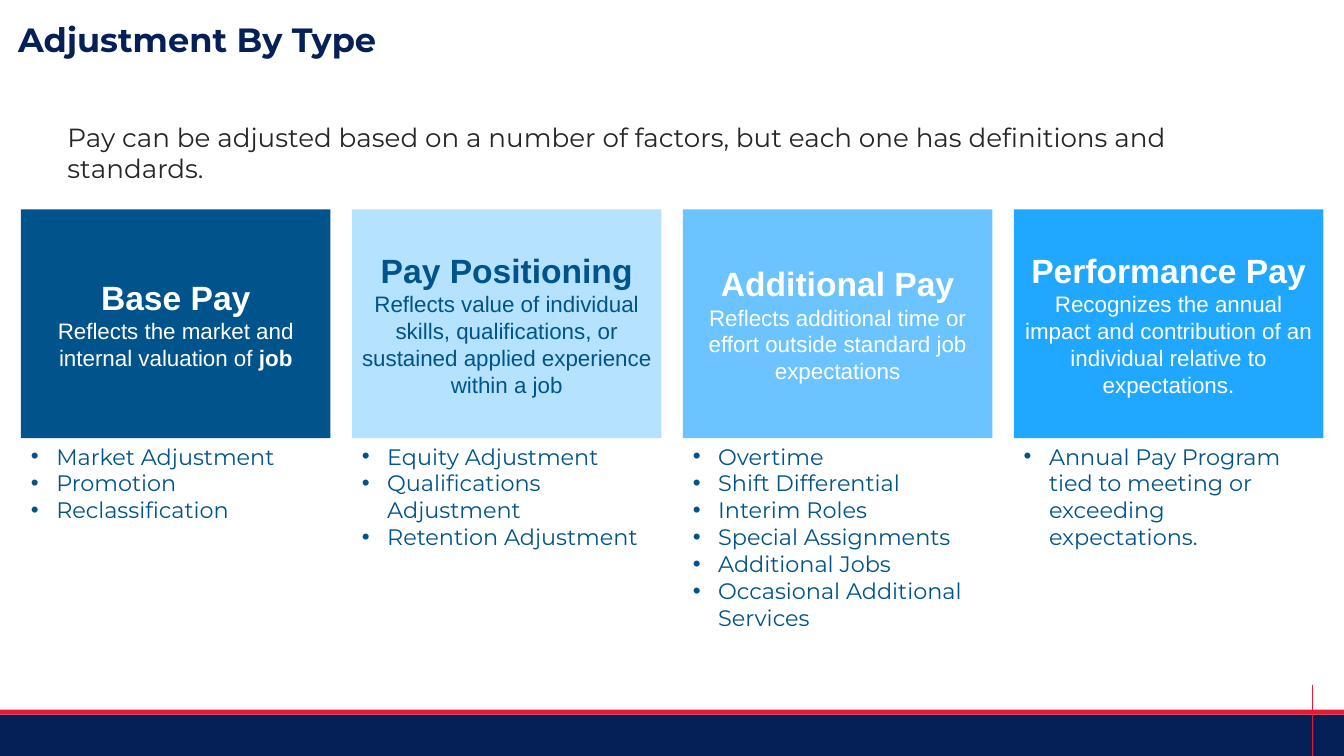
from dataclasses import dataclass

from lxml.etree import SubElement
from pptx import Presentation
from pptx.dml.color import RGBColor
from pptx.enum.shapes import MSO_CONNECTOR, MSO_SHAPE
from pptx.enum.text import MSO_ANCHOR, MSO_AUTO_SIZE, PP_ALIGN
from pptx.oxml.ns import qn
from pptx.util import Cm, Pt


@dataclass(frozen=True)
class Theme:
    navy: str = "052057"
    red: str = "E61937"
    charcoal: str = "242724"
    blue: str = "00548B"
    pale_blue: str = "B5E2FF"
    sky_blue: str = "6BC4FF"
    bright_blue: str = "20A7FF"
    white: str = "FFFFFF"
    text_font: str = "Montserrat"
    card_font: str = "Arial"
    heading_size: float = 24
    intro_size: float = 18.7
    body_size: float = 16


THEME = Theme()
SLIDE_WIDTH, SLIDE_HEIGHT = Cm(33.87), Cm(19.05)
COLUMN_LEFT, COLUMN_PITCH, COLUMN_WIDTH = Cm(0.53), Cm(8.34), Cm(7.8)
CARD_TOP, CARD_HEIGHT = Cm(5.28), Cm(5.76)
LIST_TOP, LIST_LINE, LIST_MARGIN = Cm(11.03), Cm(0.68), Cm(0.25)
BULLET_INDENT = Cm(0.64)

# Heading, description, bold ending, fill, text colour, adjustments, lines they take
PAY_TYPES = [
    ("Base Pay", "Reflects the market and internal valuation of ", "job",
     THEME.blue, THEME.white,
     ["Market Adjustment", "Promotion", "Reclassification"], 3),
    ("Pay Positioning",
     "Reflects value of individual skills, qualifications, or sustained applied "
     "experience within a job", "", THEME.pale_blue, THEME.blue,
     ["Equity Adjustment", "Qualifications Adjustment", "Retention Adjustment"], 4),
    ("Additional Pay",
     "Reflects additional time or effort outside standard job expectations", "",
     THEME.sky_blue, THEME.white,
     ["Overtime", "Shift Differential", "Interim Roles", "Special Assignments",
      "Additional Jobs", "Occasional Additional Services"], 7),
    ("Performance Pay",
     "Recognizes the annual impact and contribution of an individual relative to "
     "expectations.", "", THEME.bright_blue, THEME.white,
     ["Annual Pay Program tied to meeting or exceeding expectations."], 4),
]


def write(paragraph, text, *, size, color, font=THEME.text_font, bold=False,
          align=PP_ALIGN.LEFT):
    """Append one formatted run to a paragraph."""
    paragraph.alignment = align
    run = paragraph.add_run()
    run.text = text
    run.font.name = font
    run.font.size = Pt(size)
    run.font.bold = bold
    run.font.color.rgb = RGBColor.from_string(color)


def add_block(slide, left, top, width, height, fill):
    block = slide.shapes.add_shape(MSO_SHAPE.RECTANGLE, left, top, width, height)
    block.shadow.inherit = False
    block.fill.solid()
    block.fill.fore_color.rgb = RGBColor.from_string(fill)
    block.line.fill.background()
    return block


def add_footer(slide):
    add_block(slide, 0, Cm(18.01), SLIDE_WIDTH, Cm(1.04), THEME.navy)
    marker = slide.shapes.add_connector(
        MSO_CONNECTOR.STRAIGHT, Cm(33.07), Cm(17.25), Cm(33.07), SLIDE_HEIGHT)
    marker.line.color.rgb = RGBColor.from_string(THEME.red)
    marker.line.width = Pt(0.5)
    SubElement(marker._element.spPr, qn("a:effectLst"))
    add_block(slide, 0, Cm(17.88), SLIDE_WIDTH, Cm(0.13), THEME.red)


def set_title(slide, text):
    title = slide.shapes.title
    title.left, title.top, title.width, title.height = Cm(0.2), Cm(0.36), Cm(9.65), Cm(1.27)
    frame = title.text_frame
    frame.word_wrap = False
    frame.auto_size = MSO_AUTO_SIZE.SHAPE_TO_FIT_TEXT
    frame.vertical_anchor = MSO_ANCHOR.TOP
    write(frame.paragraphs[0], text, size=THEME.heading_size, color=THEME.navy, bold=True)


def add_intro(slide, text):
    intro = slide.shapes.add_textbox(Cm(1.7), Cm(3.05), Cm(30.48), Cm(1.63))
    frame = intro.text_frame
    frame.word_wrap = True
    frame.margin_left = frame.margin_top = frame.margin_right = frame.margin_bottom = 0
    frame.paragraphs[0].space_before = Pt(13.3)
    write(frame.paragraphs[0], text, size=THEME.intro_size, color=THEME.charcoal)


def add_card(slide, left, heading, description, ending, fill, color):
    card = add_block(slide, left, CARD_TOP, COLUMN_WIDTH, CARD_HEIGHT, fill)
    frame = card.text_frame
    frame.word_wrap = True
    frame.vertical_anchor = MSO_ANCHOR.MIDDLE
    style = dict(color=color, font=THEME.card_font, align=PP_ALIGN.CENTER)
    write(frame.paragraphs[0], heading, size=THEME.heading_size, bold=True, **style)
    details = frame.add_paragraph()
    write(details, description, size=THEME.body_size, **style)
    if ending:
        write(details, ending, size=THEME.body_size, bold=True, **style)


def add_bullet(paragraph):
    properties = paragraph._p.get_or_add_pPr()
    properties.set("marL", str(BULLET_INDENT))
    properties.set("indent", str(-BULLET_INDENT))
    SubElement(properties, qn("a:buFont")).set("typeface", THEME.card_font)
    SubElement(properties, qn("a:buChar")).set("char", "•")


def add_adjustments(slide, left, adjustments, line_count):
    height = LIST_LINE * line_count + LIST_MARGIN
    listing = slide.shapes.add_textbox(left, LIST_TOP, COLUMN_WIDTH, height)
    frame = listing.text_frame
    frame.word_wrap = True
    frame.auto_size = MSO_AUTO_SIZE.SHAPE_TO_FIT_TEXT
    for index, adjustment in enumerate(adjustments):
        paragraph = frame.add_paragraph() if index else frame.paragraphs[0]
        write(paragraph, adjustment, size=THEME.body_size, color=THEME.blue)
        add_bullet(paragraph)


def main():
    deck = Presentation()
    deck.slide_width, deck.slide_height = SLIDE_WIDTH, SLIDE_HEIGHT
    slide = deck.slides.add_slide(deck.slide_layouts[5])

    # Frame of the slide
    add_footer(slide)
    set_title(slide, "Adjustment By Type")
    add_intro(slide, "Pay can be adjusted based on a number of factors, "
                     "but each one has definitions and standards.")

    # One column for each type of pay
    for column, (*card, adjustments, line_count) in enumerate(PAY_TYPES):
        left = COLUMN_LEFT + column * COLUMN_PITCH
        add_card(slide, left, *card)
        add_adjustments(slide, left, adjustments, line_count)

    deck.save("out.pptx")


if __name__ == "__main__":
    main()
